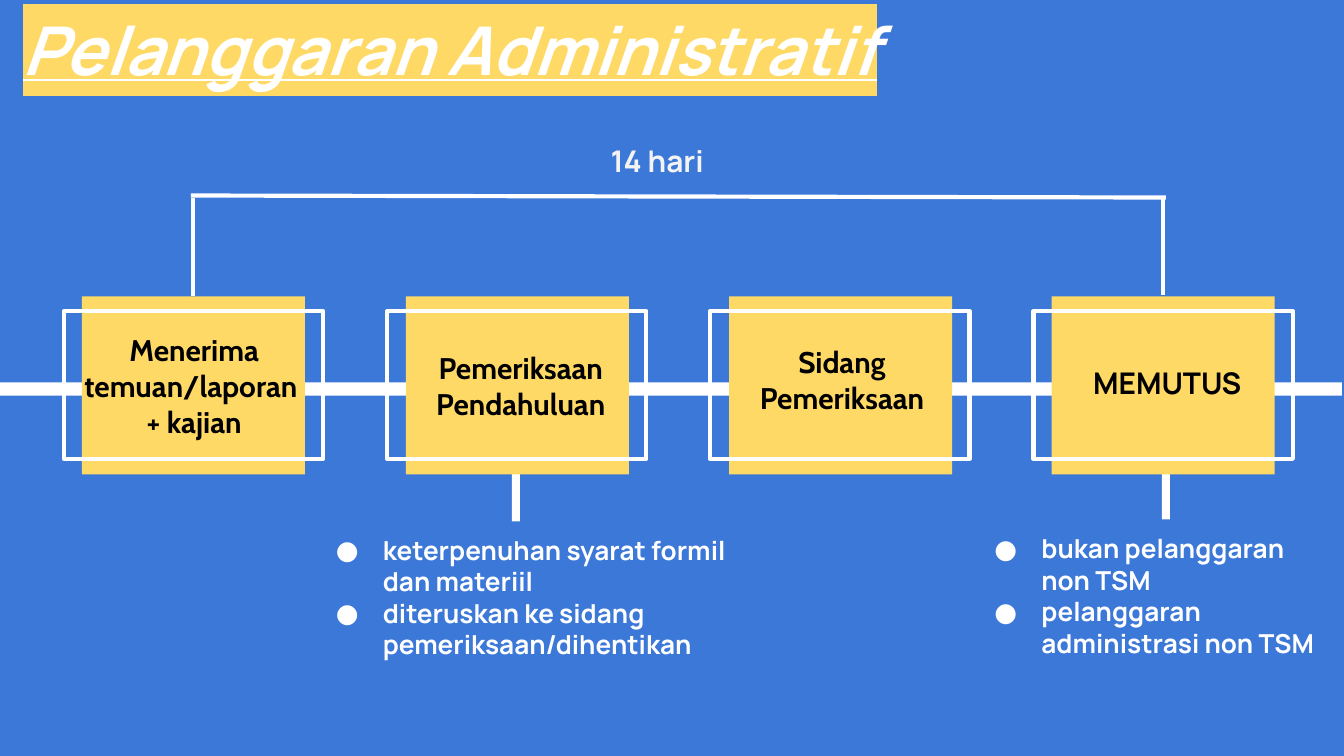
from dataclasses import dataclass

from lxml.etree import SubElement
from pptx import Presentation
from pptx.dml.color import RGBColor
from pptx.enum.shapes import MSO_CONNECTOR as Connector, MSO_SHAPE as Shape
from pptx.enum.text import PP_ALIGN as Align
from pptx.oxml.ns import qn
from pptx.slide import Slide
from pptx.text.text import _Paragraph as Paragraph
from pptx.util import Emu, Pt

PX = 4572


@dataclass(frozen=True)
class Theme:
    blue: str = "3C78D8"
    yellow: str = "FFD966"
    white: str = "FFFFFF"
    pale: str = "F3F3F3"
    black: str = "000000"
    sans: str = "Manrope"
    label: str = "Cabin"
    title_size: int = 36
    label_size: int = 16
    note_size: int = 14
    stroke: float = 2.25


@dataclass(frozen=True)
class Area:
    left: int
    top: int
    width: int
    height: int


@dataclass(frozen=True)
class Step:
    text: str
    card_left: int
    text_left: int
    text_top: int
    font: str


@dataclass(frozen=True)
class Note:
    area: Area
    points: tuple[str, ...]


@dataclass(frozen=True)
class Line:
    x1: int
    y1: int
    x2: int
    y2: int


THEME = Theme()
FRAME_LEFT = 95
FRAME_PITCH = 481
STEPS = (
    Step("Menerima temuan/laporan \v+ kajian", 122, 84, 474, THEME.label),
    Step("Pemeriksaan Pendahuluan", 604, 570, 501, THEME.label),
    Step("Sidang Pemeriksaan", 1085, 1048, 492, THEME.label),
    Step("MEMUTUS", 1565, 1532, 523, THEME.sans),
)
NOTES = (
    Note(Area(450, 775, 658, 188),
         ("keterpenuhan syarat formil dan materiil",
          "diteruskan ke sidang pemeriksaan/dihentikan")),
    Note(Area(1430, 773, 558, 188),
         ("bukan pelanggaran non TSM",
          "pelanggaran administrasi non TSM")),
)
STEMS = (Area(1729, 627, 12, 146), Area(762, 630, 12, 146))
TIMELINE = Area(-3, 569, 2000, 20)
BRACKET = (
    Line(287, 441, 287, 294),
    Line(1731, 439, 1731, 292),
    Line(284, 291, 1735, 294),
)


def px(length: int) -> Emu:
    return Emu(length * PX)


def place(area: Area) -> tuple[Emu, Emu, Emu, Emu]:
    return px(area.left), px(area.top), px(area.width), px(area.height)


def rgb(color: str) -> RGBColor:
    return RGBColor.from_string(color)


def draw_block(page: Slide, area: Area, color: str) -> None:
    block = page.shapes.add_shape(Shape.RECTANGLE, *place(area))
    block.shadow.inherit = False
    block.fill.solid()
    block.fill.fore_color.rgb = rgb(color)
    block.line.fill.background()


def draw_frame(page: Slide, area: Area) -> None:
    frame = page.shapes.add_shape(Shape.RECTANGLE, *place(area))
    frame.shadow.inherit = False
    frame.fill.background()
    frame.line.color.rgb = rgb(THEME.white)
    frame.line.width = Pt(THEME.stroke)


def draw_line(page: Slide, line: Line) -> None:
    connector = page.shapes.add_connector(
        Connector.STRAIGHT, px(line.x1), px(line.y1), px(line.x2), px(line.y2))
    connector.line.color.rgb = rgb(THEME.white)
    connector.line.width = Pt(THEME.stroke)
    SubElement(connector._element.spPr, qn("a:effectLst"))


def draw_text(page: Slide, area: Area, texts: tuple[str, ...], size: int,
              color: str, font: str = THEME.sans,
              align: Align = Align.LEFT) -> list[Paragraph]:
    box = page.shapes.add_textbox(*place(area))
    frame = box.text_frame
    frame.word_wrap = True
    frame.margin_left = frame.margin_right = px(20)
    frame.margin_top = frame.margin_bottom = px(20)
    frame.text = "\n".join(texts)
    for para in frame.paragraphs:
        para.alignment = align
        para.font.name = font
        para.font.size = Pt(size)
        para.font.bold = True
        para.font.color.rgb = rgb(color)
    return list(frame.paragraphs)


def add_bullet(para: Paragraph) -> None:
    properties = para._p.get_or_add_pPr()
    properties.set("marL", str(px(100)))
    properties.set("indent", str(px(-70)))
    bullet_color = SubElement(properties, qn("a:buClr"))
    SubElement(bullet_color, qn("a:srgbClr"), val=THEME.white)
    SubElement(properties, qn("a:buFont"), typeface=THEME.sans)
    SubElement(properties, qn("a:buChar"), char="●")
    properties.append(properties.find(qn("a:defRPr")))


def draw_title(page: Slide) -> None:
    (para,) = draw_text(page, Area(14, -7, 1606, 188),
                        ("Pelanggaran Administratif",),
                        THEME.title_size, THEME.white)
    para.font.italic = True
    para.font.underline = True
    (span,) = para.runs
    highlight = SubElement(span._r.get_or_add_rPr(), qn("a:highlight"))
    SubElement(highlight, qn("a:srgbClr"), val=THEME.yellow)


def main() -> None:
    deck = Presentation()
    deck.slide_width, deck.slide_height = px(2000), px(1125)
    page = deck.slides.add_slide(deck.slide_layouts[6])
    page.background.fill.solid()
    page.background.fill.fore_color.rgb = rgb(THEME.blue)

    for bar in (*STEMS, TIMELINE):
        draw_block(page, bar, THEME.white)
    for step in STEPS:
        draw_block(page, Area(step.card_left, 441, 332, 265), THEME.yellow)
    for index in range(len(STEPS)):
        left = FRAME_LEFT + FRAME_PITCH * index
        draw_frame(page, Area(left, 463, 386, 220))
    for step in STEPS:
        draw_text(page, Area(step.text_left, step.text_top, 410, 188),
                  (step.text,), THEME.label_size, THEME.black, step.font,
                  Align.CENTER)
    for line in BRACKET:
        draw_line(page, line)
    draw_text(page, Area(889, 192, 196, 102), ("14 hari",),
              THEME.label_size, THEME.pale)
    for note in NOTES:
        for para in draw_text(page, note.area, note.points,
                              THEME.note_size, THEME.white):
            add_bullet(para)
    draw_title(page)
    deck.save("out.pptx")


if __name__ == "__main__":
    main()
